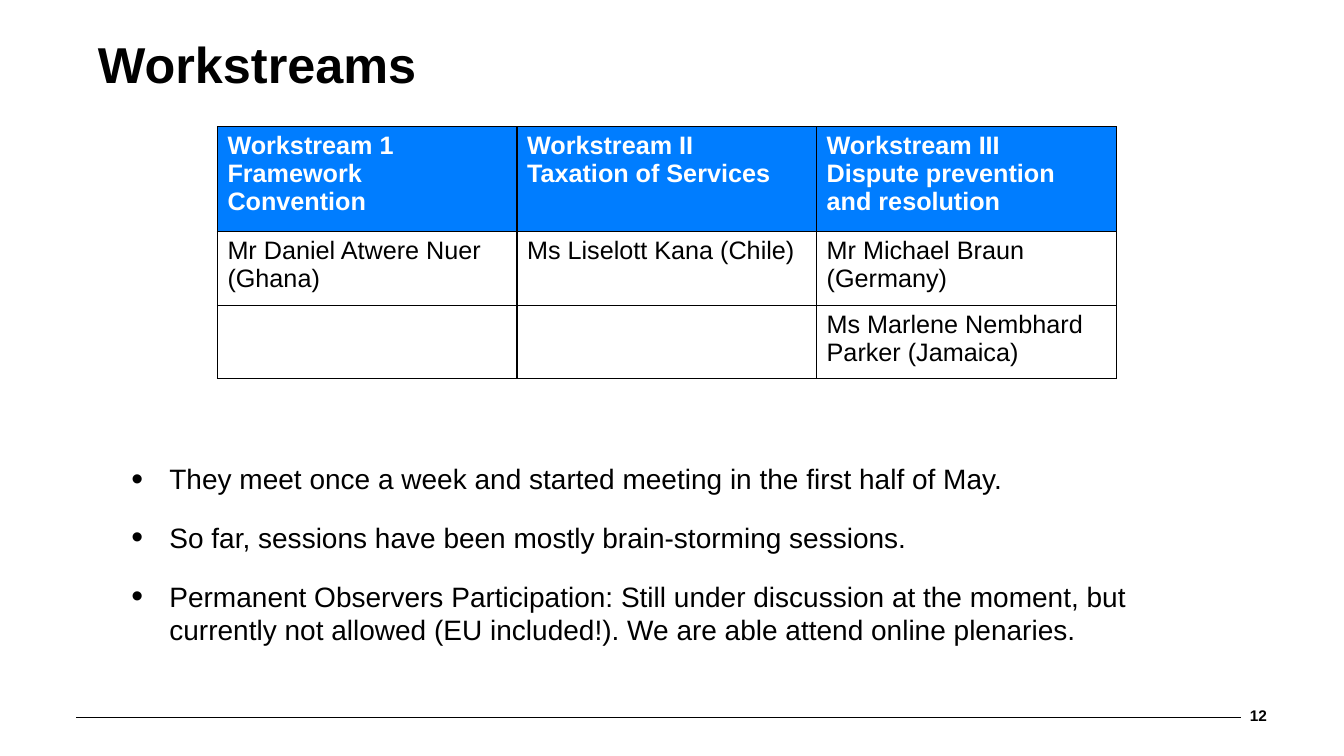
from lxml import etree
from pptx import Presentation
from pptx.dml.color import RGBColor
from pptx.enum.shapes import MSO_CONNECTOR
from pptx.enum.text import MSO_ANCHOR as Anchor, PP_ALIGN as Align
from pptx.oxml.ns import qn
from pptx.util import Cm, Pt

COLORS = {"text": "000000", "line": "000000", "header": "007DFF", "header_text": "FFFFFF"}
INDENT = Cm(0.96)


def write(frame, lines, size, color="text", bold=False, align=Align.LEFT,
          anchor=Anchor.TOP, bullet=False, gap=0):
    """Fill a text frame with one paragraph per line; gap is the space between them in points."""
    frame.word_wrap = True
    frame.vertical_anchor = anchor
    for index, line in enumerate(lines):
        paragraph = frame.add_paragraph() if index else frame.paragraphs[0]
        if bullet:
            props = paragraph._p.get_or_add_pPr()
            props.set("marL", str(INDENT))
            props.set("indent", str(-INDENT))
            etree.SubElement(props, qn("a:buSzPct")).set("val", "120000")
            etree.SubElement(props, qn("a:buFont")).set("typeface", "Arial")
            etree.SubElement(props, qn("a:buChar")).set("char", "•")
        paragraph.alignment = align
        if index:
            paragraph.space_before = Pt(gap)
        run = paragraph.add_run()
        run.text = line
        run.font.name = "Arial"
        run.font.size = Pt(size)
        run.font.bold = bold
        run.font.color.rgb = RGBColor.from_string(COLORS[color])


def add_borders(cell):
    props = cell._tc.get_or_add_tcPr()
    for position, side in enumerate(("a:lnL", "a:lnR", "a:lnT", "a:lnB")):
        border = etree.Element(qn(side), w=str(Pt(1)))
        fill = etree.SubElement(border, qn("a:solidFill"))
        etree.SubElement(fill, qn("a:srgbClr")).set("val", COLORS["line"])
        props.insert(position, border)


prs = Presentation()
prs.slide_width, prs.slide_height = Cm(33.87), Cm(19.05)
slide = prs.slides.add_slide(prs.slide_layouts[6])
shapes = slide.shapes

# Footer
footer_rule = shapes.add_connector(MSO_CONNECTOR.STRAIGHT, Cm(1.92), Cm(18.08), Cm(31.28), Cm(18.08))
footer_rule.line.color.rgb = RGBColor.from_string(COLORS["line"])
footer_rule.line.width = Pt(0.5)
etree.SubElement(footer_rule._element.spPr, qn("a:effectLst"))

page_number = shapes.add_textbox(Cm(30.61), Cm(17.6), Cm(1.32), Cm(0.84)).text_frame
page_number.margin_right = 0
write(page_number, ["12"], 11, bold=True, align=Align.RIGHT, anchor=Anchor.MIDDLE)

# Title
title = shapes.add_textbox(Cm(2.22), Cm(0.81), Cm(31), Cm(1.68)).text_frame
write(title, ["Workstreams"], 36, bold=True, anchor=Anchor.BOTTOM)

# Workstreams and their leads
workstreams = [
    [["Workstream 1", "Framework Convention"],
     ["Workstream II", "Taxation of Services"],
     ["Workstream III", "Dispute prevention and resolution"]],
    [["Mr Daniel Atwere Nuer (Ghana)"], ["Ms Liselott Kana (Chile)"], ["Mr Michael Braun (Germany)"]],
    [[], [], ["Ms Marlene Nembhard Parker (Jamaica)"]],
]
row_heights = [2.65, 1.85, 1.85]
column_width = 7.55
table = shapes.add_table(3, 3, Cm(5.48), Cm(3.19), Cm(3 * column_width), Cm(sum(row_heights))).table
table.horz_banding = False
for column in table.columns:
    column.width = Cm(column_width)
for row_index, (entries, height) in enumerate(zip(workstreams, row_heights)):
    table.rows[row_index].height = Cm(height)
    is_header = row_index == 0
    for column_index, lines in enumerate(entries):
        cell = table.cell(row_index, column_index)
        if is_header:
            cell.fill.solid()
            cell.fill.fore_color.rgb = RGBColor.from_string(COLORS["header"])
        else:
            cell.fill.background()
        add_borders(cell)
        write(cell.text_frame, lines, 18, color="header_text" if is_header else "text", bold=is_header)

# Status of the meetings
status = shapes.add_textbox(Cm(3.06), Cm(11.51), Cm(26.2), Cm(4.95)).text_frame
write(status, [
    "They meet once a week and started meeting in the first half of May.",
    "So far, sessions have been mostly brain-storming sessions.",
    "Permanent Observers Participation: Still under discussion at the moment, but "
    "currently not allowed (EU included!). We are able attend online plenaries.",
], 20, bullet=True, gap=18)

prs.save("out.pptx")
